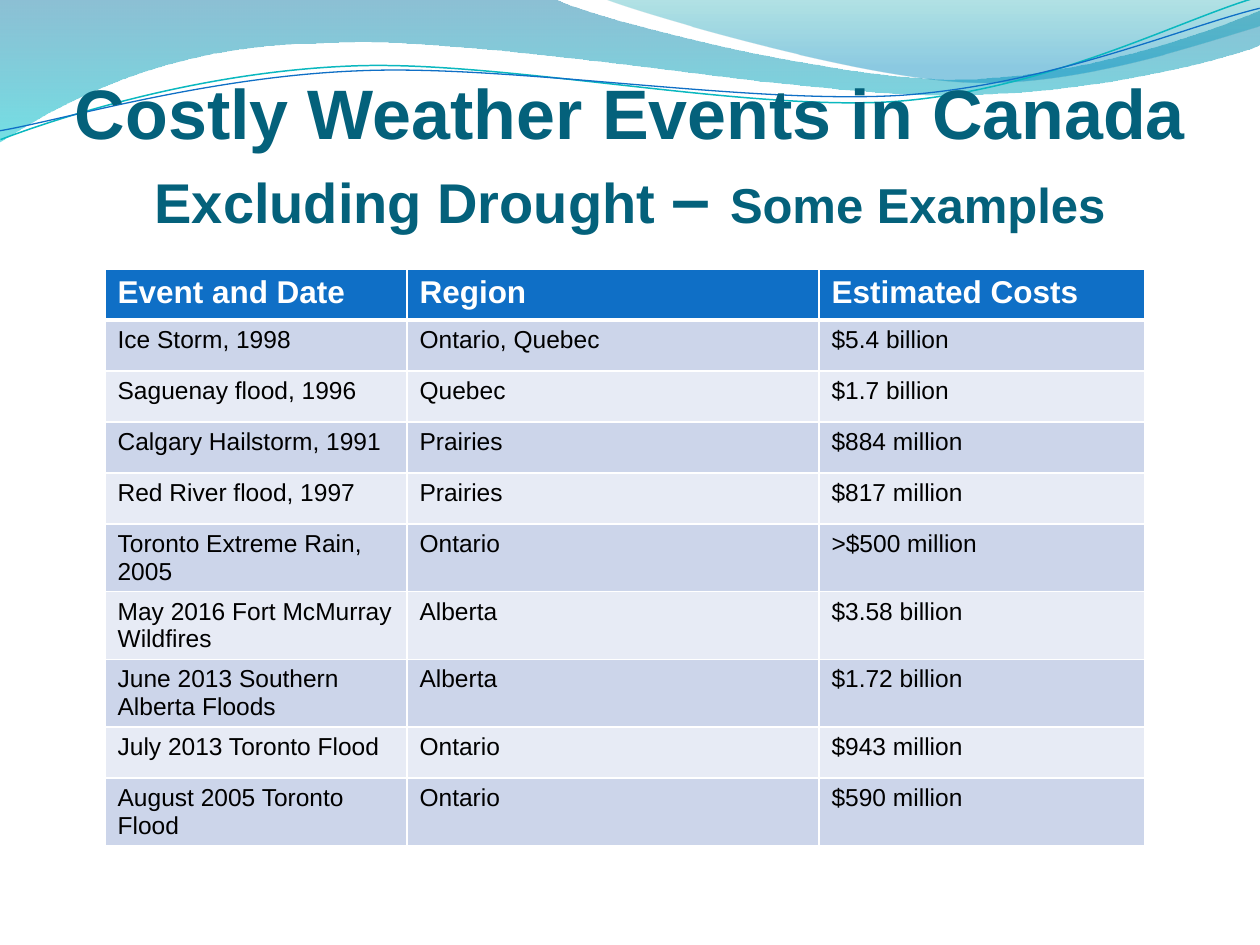
from lxml import etree
from pptx import Presentation, util as u
from pptx.dml.color import RGBColor
from pptx.enum import text
from pptx.oxml import ns

SCALE = 914400 / 126
FONT = "Arial"
STRAND_TILT = 357.3

BROAD_WAVE = [
    [(0, -1)], [(554, -1)],
    [(600, 21), (837, 79), (955, 79)],
    [(1075, 79), (1207, 33), (1260, 11)],
    [(1261, 45)],
    [(1239, 55), (1096, 96), (940, 95)],
    [(784, 94), (481, 35), (324, 43)],
    [(163, 44), (58, 105), (-1, 142)],
]
CORNER_WAVE = [
    [(604, -1)],
    [(641, 14), (859, 78), (969, 82)],
    [(1079, 87), (1211, 40), (1260, 26)],
    [(1260, 0)],
]
TEAL_STRAND = [
    [(-2, 110)],
    [(59, 90), (200, 52), (350, 53)],
    [(499, 53), (745, 118), (896, 114)],
    [(1049, 109), (1184, 45), (1260, 27)],
]
BLUE_STRAND = [
    [(-2, 101)],
    [(57, 94), (207, 57), (357, 58)],
    [(509, 58), (750, 111), (902, 108)],
    [(1052, 104), (1188, 52), (1262, 38)],
]
TITLE_PARTS = [
    ("Costly Weather Events in Canada ", 40),
    ("Excluding Drought ", 32),
    ("– ", 40),
    ("Some Examples", 28),
]
HEADINGS = ("Event and Date", "Region", "Estimated Costs")
EVENTS = [
    ("Ice Storm, 1998", "Ontario, Quebec", "$5.4 billion"),
    ("Saguenay flood, 1996", "Quebec", "$1.7 billion"),
    ("Calgary Hailstorm, 1991", "Prairies", "$884 million"),
    ("Red River flood, 1997", "Prairies", "$817 million"),
    ("Toronto Extreme Rain, 2005", "Ontario", ">$500 million"),
    ("May 2016 Fort McMurray Wildfires", "Alberta", "$3.58 billion"),
    ("June 2013 Southern Alberta Floods", "Alberta", "$1.72 billion"),
    ("July 2013 Toronto Flood", "Ontario", "$943 million"),
    ("August 2005 Toronto Flood", "Ontario", "$590 million"),
]


def px(length):
    return u.Emu(round(length * SCALE))


def color(value):
    return RGBColor.from_string(value)


def set_all(target, values):
    for key, value in values.items():
        setattr(target, key, value)


def add_run(paragraph, words, size, hue, bold):
    run = paragraph.add_run()
    run.text = words
    set_all(run.font, {"name": FONT, "size": u.Pt(size), "bold": bold})
    run.font.color.rgb = color(hue)


def child(parent, tag, **attributes):
    return etree.SubElement(parent, ns.qn(tag), attributes)


def add_curve(slide, left, top, segments, close):
    placed = [[(px(left + x), px(top + y)) for x, y in segment] for segment in segments]
    anchors = [segment[-1] for segment in placed]
    builder = slide.shapes.build_freeform(*anchors[0], scale=1.0)
    builder.add_line_segments(anchors[1:], close=close)
    curve = builder.convert_to_shape()
    curve.shadow.inherit = False
    outline = next(curve._element.iter(ns.qn("a:path")))
    for step, segment in zip(list(outline)[1:], placed[1:]):
        if len(segment) == 3:
            bend = etree.Element(ns.qn("a:cubicBezTo"))
            for x, y in segment:
                child(bend, "a:pt", x=str(x - curve.left), y=str(y - curve.top))
            outline.replace(step, bend)
    return curve


def add_wave(slide, left, top, segments, stops):
    wave = add_curve(slide, left, top, segments, True)
    wave.line.fill.background()
    wave.fill.gradient()
    gradient = wave._element.spPr.find(ns.qn("a:gradFill"))
    for part in list(gradient):
        gradient.remove(part)
    stop_list = child(gradient, "a:gsLst")
    for position, hue, opacity in stops:
        stop = child(stop_list, "a:gs", pos=str(position * 1000))
        tint = child(stop, "a:srgbClr", val=hue)
        child(tint, "a:alpha", val=str(opacity * 1000))
    child(gradient, "a:lin", ang="5400000", scaled="0")


def add_header_waves(slide, left, top):
    add_wave(slide, left, top, BROAD_WAVE, [(0, "0074A1", 45), (100, "00C6CF", 55)])
    add_wave(slide, left, top, CORNER_WAVE, [(0, "00A1A9", 30), (80, "008BBF", 45)])
    for segments, hue, width in ((TEAL_STRAND, "0AB8BF", 0.85), (BLUE_STRAND, "0F6FC6", 0.75)):
        strand = add_curve(slide, left, top, segments, False)
        strand.rotation = STRAND_TILT
        strand.fill.background()
        strand.line.color.rgb = color(hue)
        strand.line.width = u.Pt(width)


def add_title(slide, left, top, width, height):
    title = slide.shapes.title
    set_all(title, {"left": px(left), "top": px(top),
                    "width": px(width), "height": px(height)})
    frame = title.text_frame
    set_all(frame, {"word_wrap": True, "auto_size": text.MSO_AUTO_SIZE.NONE,
                    "vertical_anchor": text.MSO_ANCHOR.TOP, "margin_top": px(7)})
    heading = frame.paragraphs[0]
    set_all(heading, {"alignment": text.PP_ALIGN.CENTER, "line_spacing": 1.0,
                      "space_before": u.Pt(0)})
    for words, size in TITLE_PARTS:
        add_run(heading, words, size, "04617B", True)
    slide.shapes._spTree.append(title._element)


def add_borders(cell, row):
    properties = cell._tc.get_or_add_tcPr()
    widths = {"L": 1, "R": 1, "T": 3 if row == 1 else 1, "B": 3 if row == 0 else 1}
    for side, width in widths.items():
        border = child(properties, f"a:ln{side}", w=str(u.Pt(width)))
        child(child(border, "a:solidFill"), "a:srgbClr", val="FFFFFF")


def add_events_table(slide, left, top, column_widths, row_height):
    rows = [HEADINGS, *EVENTS]
    table = slide.shapes.add_table(
        len(rows), len(HEADINGS), px(left), px(top),
        px(sum(column_widths)), px(row_height * len(rows))).table
    for column, width in zip(table.columns, column_widths):
        column.width = px(width)
    for index, entries in enumerate(rows):
        table.rows[index].height = px(row_height)
        header = index == 0
        band = "0F6FC6" if header else ("E7EBF5", "CCD5EA")[index % 2]
        style = (18, "FFFFFF", True) if header else (14, "000000", False)
        for position, words in enumerate(entries):
            cell = table.cell(index, position)
            add_borders(cell, index)
            cell.fill.solid()
            cell.fill.fore_color.rgb = color(band)
            add_run(cell.text_frame.paragraphs[0], words, *style)


def main():
    deck = Presentation()
    set_all(deck, {"slide_width": px(1260), "slide_height": px(945)})
    slide = deck.slides.add_slide(deck.slide_layouts[5])
    add_header_waves(slide, 0, 0)
    add_events_table(slide, 105, 269, (302, 412, 326), 51)
    add_title(slide, 0, 63, 1260, 136)
    deck.save("out.pptx")


if __name__ == "__main__":
    main()
